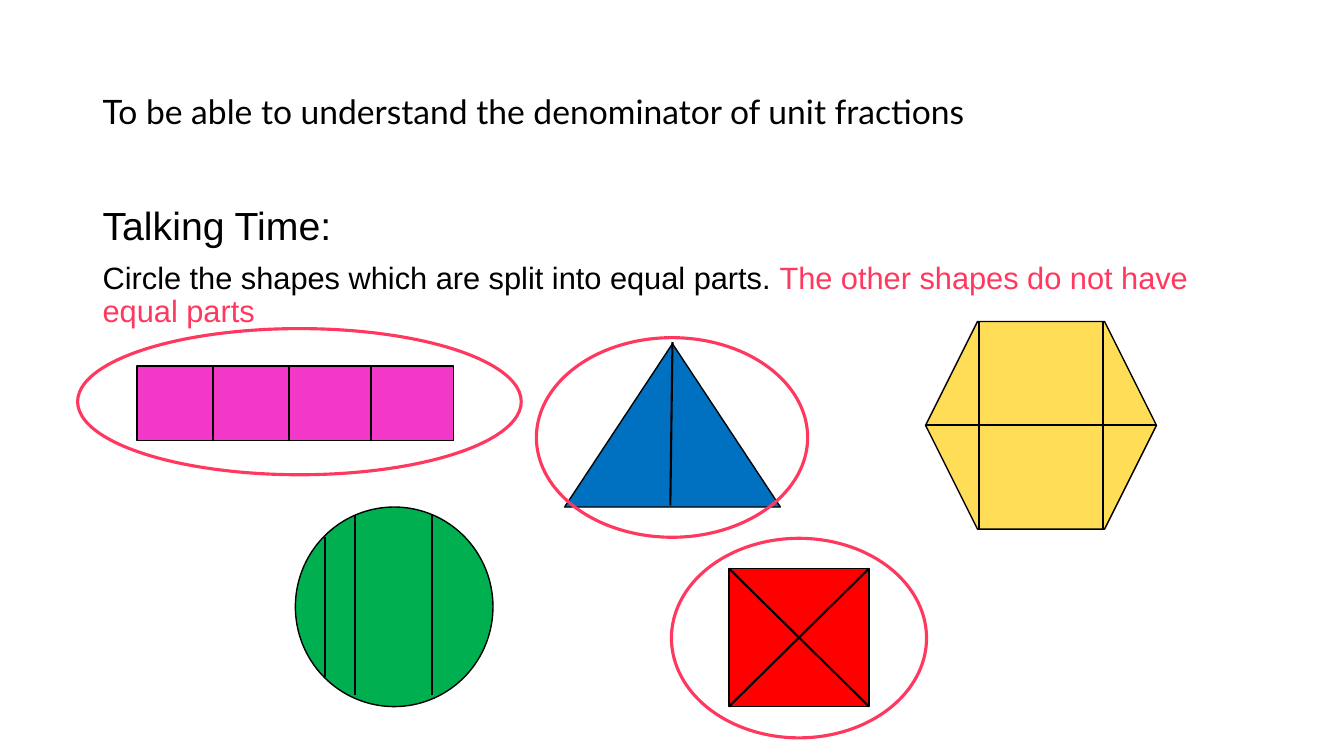
from pptx import Presentation
from pptx.dml.color import RGBColor
from pptx.enum.shapes import MSO_CONNECTOR as Link, MSO_SHAPE as Kind
from pptx.enum.text import MSO_ANCHOR as Anchor
from pptx.oxml.ns import qn
from pptx.util import Inches, Pt
from lxml import etree

BLACK = RGBColor(0x00, 0x00, 0x00)
ROSE = RGBColor(0xFF, 0x38, 0x60)
PINK = RGBColor(0xF3, 0x37, 0xC7)
BLUE = RGBColor(0x00, 0x70, 0xC0)
GOLD = RGBColor(0xFF, 0xDD, 0x57)
GREEN = RGBColor(0x00, 0xB0, 0x50)
RED = RGBColor(0xFF, 0x00, 0x00)

WIDE, HIGH = 13.33, 7.5

# Shape, colour, box, cuts as shares of the box (x1, y1, x2, y2), answer ring
FIGURES = [
    (Kind.RECTANGLE, PINK, (1.36, 3.63, 3.14, 0.74),
     [(x, 0, x, 1) for x in (0.24, 0.48, 0.74)], (0.77, 3.26, 4.4, 1.45)),
    (Kind.ISOSCELES_TRIANGLE, BLUE, (5.6, 3.41, 2.14, 1.62),
     [(0.5, -0.01, 0.49, 0.99)], (5.32, 3.35, 2.69, 1.98)),
    (Kind.HEXAGON, GOLD, (9.18, 3.19, 2.29, 2.06),
     [(0.23, 0, 0.23, 1), (0.77, 0, 0.77, 1), (0, 0.5, 1, 0.5)], None),
    (Kind.OVAL, GREEN, (2.93, 5.03, 1.96, 1.98),
     [(0.15, 0.15, 0.15, 0.85), (0.3, 0.04, 0.3, 0.94),
      (0.69, 0.04, 0.69, 0.94)], None),
    (Kind.RECTANGLE, RED, (7.23, 5.64, 1.39, 1.37),
     [(0, 0, 1, 1), (0, 1, 1, 0)], (6.66, 5.34, 2.53, 1.98)),
]


def add_text(slide, box, paras, anchor=Anchor.TOP):
    """Each paragraph is (font, size, [(text, colour), ...])."""
    frame = slide.shapes.add_textbox(*map(Inches, box)).text_frame
    frame.word_wrap = True
    frame.vertical_anchor = anchor
    for i, (font, size, runs) in enumerate(paras):
        para = frame.add_paragraph() if i else frame.paragraphs[0]
        para.line_spacing = 0.9
        para.space_before = Pt(10 if i else 0)
        para.font.name, para.font.size = font, Pt(size)
        for text, color in runs:
            run = para.add_run()
            run.text = text
            run.font.color.rgb = color


def add_shape(slide, kind, box, fill, line, width):
    shape = slide.shapes.add_shape(kind, *map(Inches, box))
    shape.shadow.inherit = False
    if fill is None:
        shape.fill.background()
    else:
        shape.fill.solid()
        shape.fill.fore_color.rgb = fill
    shape.line.color.rgb = line
    shape.line.width = Pt(width)


def add_cut(slide, box, cut):
    left, top, width, height = box
    x1, y1, x2, y2 = cut
    ends = (left + x1 * width, top + y1 * height,
            left + x2 * width, top + y2 * height)
    line = slide.shapes.add_connector(Link.STRAIGHT, *map(Inches, ends))
    line.line.color.rgb = BLACK
    line.line.width = Pt(1.5)
    etree.SubElement(line._element.spPr, qn("a:effectLst"))


def add_figure(slide, kind, fill, box, cuts, ring):
    add_shape(slide, kind, box, fill, BLACK, 1)
    for cut in cuts:
        add_cut(slide, box, cut)
    if ring:
        add_shape(slide, Kind.OVAL, ring, None, ROSE, 2.25)


def main():
    deck = Presentation()
    deck.slide_width, deck.slide_height = Inches(WIDE), Inches(HIGH)
    slide = deck.slides.add_slide(deck.slide_layouts[6])

    # Title
    add_text(slide, (0.92, 0.4, 9.6, 1.45), [
        ("Lato", 24, [("To be able to understand the denominator "
                       "of unit fractions", BLACK)]),
    ], Anchor.MIDDLE)

    # Task and answer
    add_text(slide, (0.92, 2, 11.5, 5.1), [
        ("Arial", 28, [("Talking Time:", BLACK)]),
        ("Arial", 22, [
            ("Circle the shapes which are split into equal parts. ", BLACK),
            ("The other shapes do not have equal parts", ROSE)]),
    ])

    # Split shapes
    for figure in FIGURES:
        add_figure(slide, *figure)

    deck.save("out.pptx")


if __name__ == "__main__":
    main()
